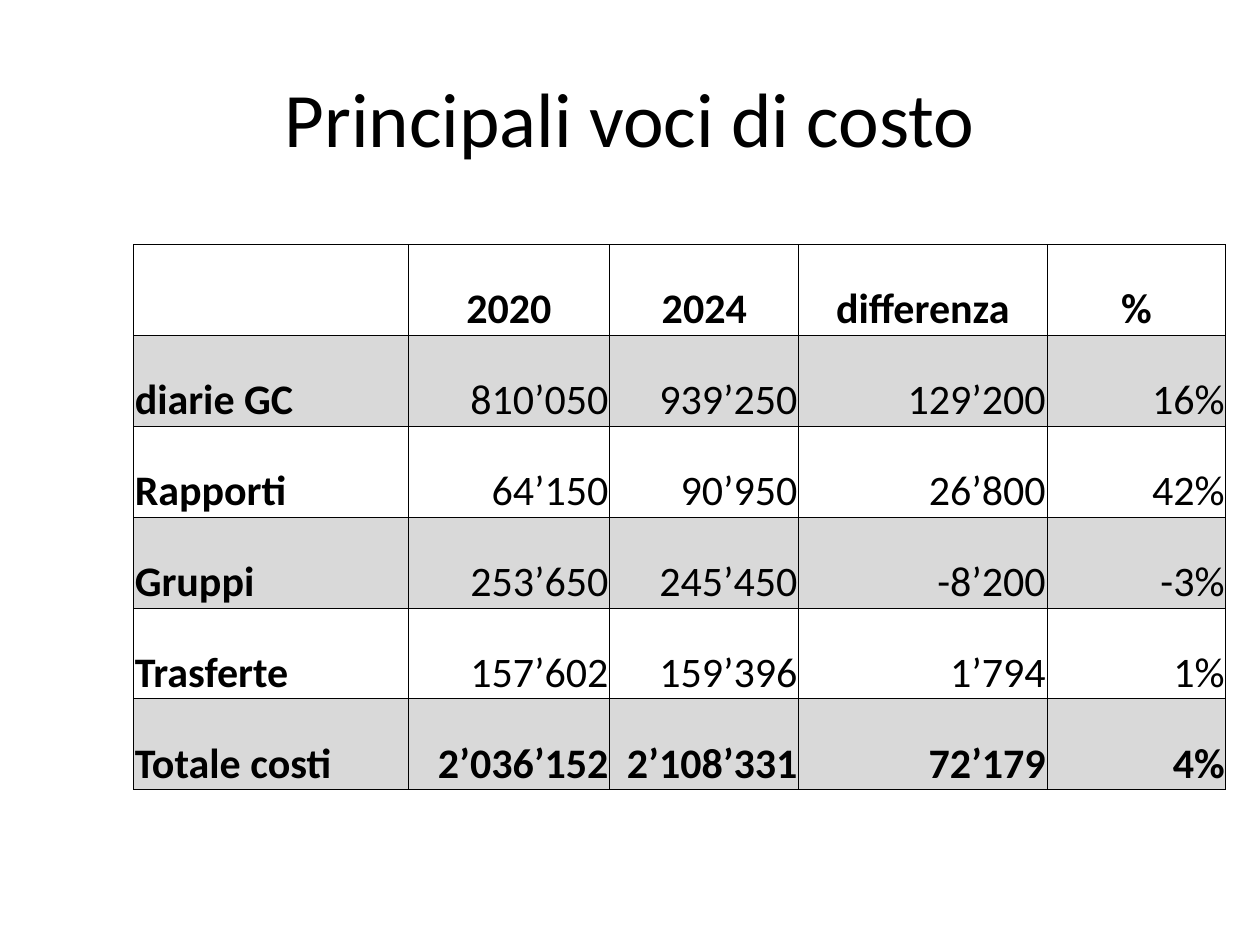
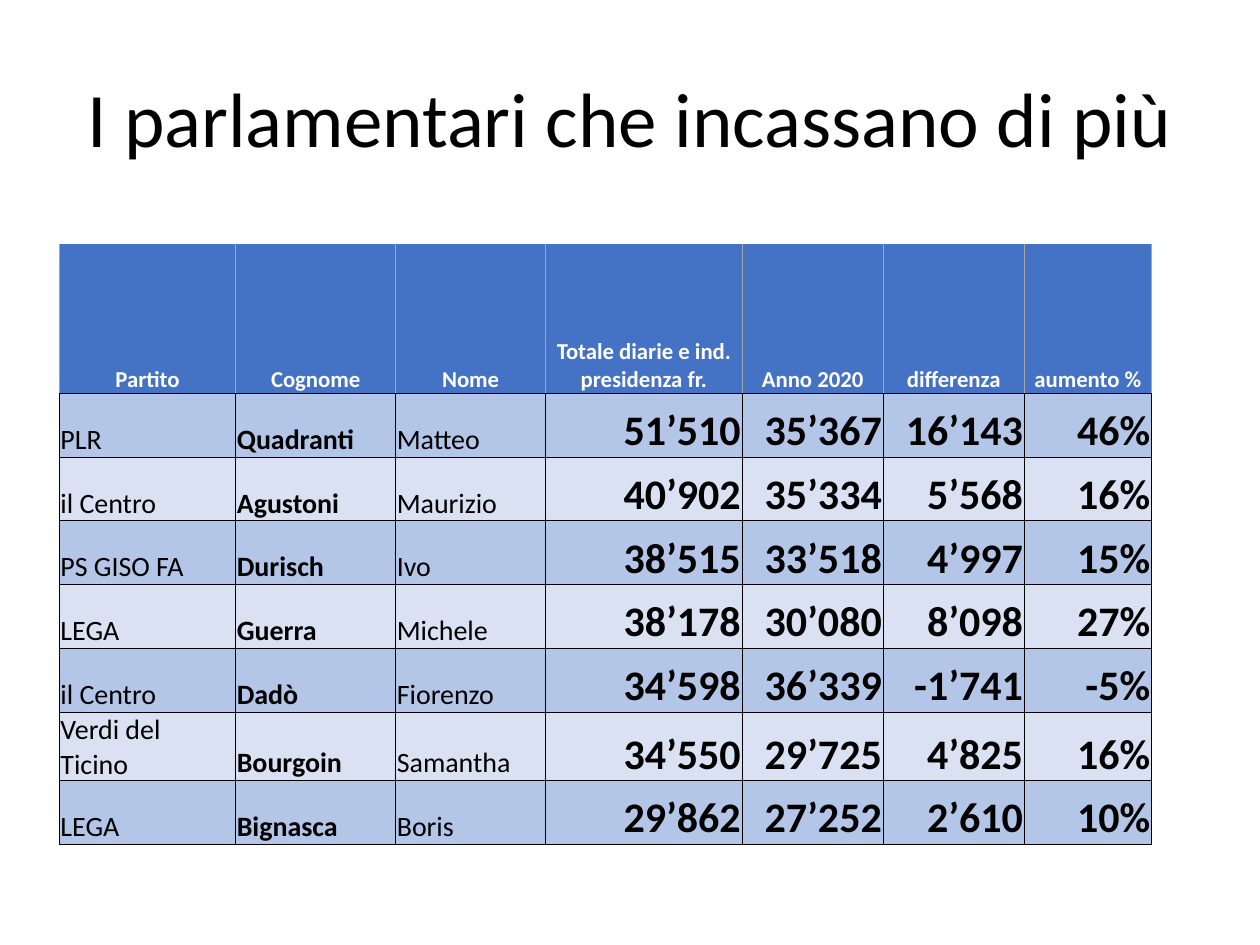
from lxml import etree
from pptx import Presentation
from pptx.dml.color import RGBColor
from pptx.enum.text import MSO_ANCHOR as Anchor, PP_ALIGN as Align
from pptx.oxml.ns import qn
from pptx.util import Inches, Pt

BLACK = RGBColor(0x00, 0x00, 0x00)
WHITE = RGBColor(0xFF, 0xFF, 0xFF)
GREY_BAND = RGBColor(0xD9, 0xD9, 0xD9)
GREY_LINE = RGBColor(0xA6, 0xA6, 0xA6)
BLUE_HEADER = RGBColor(0x44, 0x72, 0xC4)
BLUE_BAND = RGBColor(0xB4, 0xC6, 0xE7)
PALE_BAND = RGBColor(0xD9, 0xE1, 0xF2)

FONT = "Calibri"
SLIDE_WIDTH, SLIDE_HEIGHT = Inches(10), Inches(7.5)
TABLE_TOP = 25.87
CELL_MARGIN = Inches(0.01)
BLACK_GRID = dict.fromkeys("LRTB", BLACK)
HEADER_GRID = {"L": GREY_LINE, "R": GREY_LINE, "T": None, "B": BLACK}

COSTS = [
    ("", "2020", "2024", "differenza", "%"),
    ("diarie GC", "810’050", "939’250", "129’200", "16%"),
    ("Rapporti", "64’150", "90’950", "26’800", "42%"),
    ("Gruppi", "253’650", "245’450", "-8’200", "-3%"),
    ("Trasferte", "157’602", "159’396", "1’794", "1%"),
    ("Totale costi", "2’036’152", "2’108’331", "72’179", "4%"),
]
MEMBERS = [
    ("Partito", "Cognome", "Nome", "Totale diarie e ind. presidenza fr.",
     "Anno 2020", "differenza", "aumento %"),
    ("PLR", "Quadranti", "Matteo", "51’510", "35’367", "16’143", "46%"),
    ("il Centro", "Agustoni", "Maurizio", "40’902", "35’334", "5’568", "16%"),
    ("PS GISO FA", "Durisch", "Ivo", "38’515", "33’518", "4’997", "15%"),
    ("LEGA", "Guerra", "Michele", "38’178", "30’080", "8’098", "27%"),
    ("il Centro", "Dadò", "Fiorenzo", "34’598", "36’339", "-1’741", "-5%"),
    ("Verdi del Ticino", "Bourgoin", "Samantha", "34’550", "29’725", "4’825", "16%"),
    ("LEGA", "Bignasca", "Boris", "29’862", "27’252", "2’610", "10%"),
]


def across(percent):
    return round(SLIDE_WIDTH * percent / 100)


def down(percent):
    return round(SLIDE_HEIGHT * percent / 100)


def write_text(frame, text, size=24, color=BLACK, bold=False, align=Align.LEFT):
    frame.word_wrap = True
    paragraph = frame.paragraphs[0]
    paragraph.alignment = align
    paragraph.font.size = Pt(size)
    if text:
        run = paragraph.add_run()
        run.text = text
        run.font.name = FONT
        run.font.size = Pt(size)
        run.font.bold = bold
        run.font.color.rgb = color


def add_titled_slide(presentation, title):
    slide = presentation.slides.add_slide(presentation.slide_layouts[6])
    box = slide.shapes.add_textbox(across(5), down(4), across(90), down(16.67))
    box.text_frame.vertical_anchor = Anchor.MIDDLE
    write_text(box.text_frame, title, size=44, align=Align.CENTER)
    return slide


def set_borders(cell, borders):
    properties = cell._tc.get_or_add_tcPr()
    for side, color in borders.items():
        line = etree.SubElement(properties, qn(f"a:ln{side}"), w=str(Pt(0.5)))
        if color is None:
            etree.SubElement(line, qn("a:noFill"))
        else:
            fill = etree.SubElement(line, qn("a:solidFill"))
            etree.SubElement(fill, qn("a:srgbClr"), val=str(color))


def format_cell(cell, text, fill=None, borders=BLACK_GRID, **text_format):
    cell.margin_left = cell.margin_right = cell.margin_top = CELL_MARGIN
    cell.margin_bottom = 0
    cell.vertical_anchor = Anchor.BOTTOM
    set_borders(cell, borders)
    if fill is None:
        cell.fill.background()
    else:
        cell.fill.solid()
        cell.fill.fore_color.rgb = fill
    write_text(cell.text_frame, text, **text_format)


def add_grid(slide, rows, left, widths, heights, cell_style):
    frame = slide.shapes.add_table(
        len(rows), len(widths), across(left), down(TABLE_TOP),
        across(sum(widths)), down(sum(heights)))
    table = frame.table
    table.first_row = table.horz_banding = False
    for column, width in zip(table.columns, widths):
        column.width = across(width)
    for table_row, height in zip(table.rows, heights):
        table_row.height = down(height)
    for row, texts in enumerate(rows):
        for column, text in enumerate(texts):
            format_cell(table.cell(row, column), text, **cell_style(row, column))


def cost_style(row, column):
    if row == 0:
        return dict(bold=True, align=Align.CENTER)
    return dict(
        fill=GREY_BAND if row % 2 else None,
        bold=column == 0 or row == len(COSTS) - 1,
        align=Align.RIGHT if column else Align.LEFT)


def member_style(row, column):
    if row == 0:
        return dict(fill=BLUE_HEADER, borders=HEADER_GRID, size=13,
                    color=WHITE, bold=True, align=Align.CENTER)
    fill = BLUE_BAND if row % 2 else PALE_BAND
    if column < 3:
        return dict(fill=fill, size=16, bold=column == 1)
    return dict(fill=fill, bold=True, align=Align.RIGHT)


def main():
    presentation = Presentation()
    presentation.slide_width = SLIDE_WIDTH
    presentation.slide_height = SLIDE_HEIGHT

    slide = add_titled_slide(presentation, "Principali voci di costo")
    add_grid(slide, COSTS, 10.6, [21.8, 16, 15, 19.7, 14.2],
             [9.62] * len(COSTS), cost_style)

    slide = add_titled_slide(presentation, "I parlamentari che incassano di più")
    add_grid(slide, MEMBERS, 4.7, [14, 12.7, 11.9, 15.6, 11.2, 11.2, 10.1],
             [15.75] + [6.75] * (len(MEMBERS) - 1), member_style)

    presentation.save("out.pptx")


if __name__ == "__main__":
    main()
